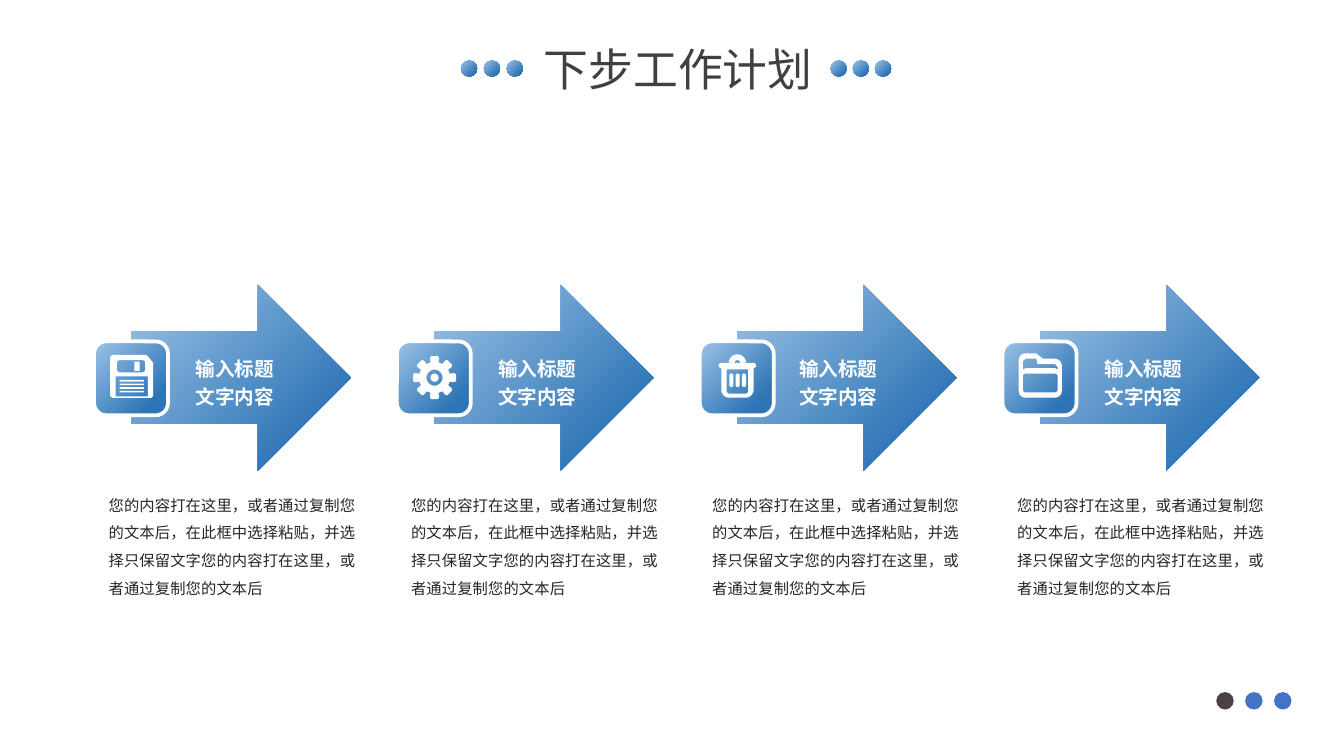
"""Build the next-steps slide: four arrow cards under a dotted title."""
from math import cos, sin, radians
from lxml.etree import SubElement
from pptx import Presentation
from pptx.dml.color import RGBColor
from pptx.enum.shapes import MSO_SHAPE as Kind
from pptx.enum.text import MSO_ANCHOR as Anchor, MSO_AUTO_SIZE as Auto, PP_ALIGN as Align
from pptx.oxml.ns import qn
from pptx.util import Inches, Pt

FONT = "Noto Sans CJK SC"
BLUES = ("9DC3E6", "2E75B6")
BODY = "您的内容打在这里，或者通过复制您的文本后，在此框中选择粘贴，并选择只保留文字您的内容打在这里，或者通过复制您的文本后"
tint = RGBColor.from_string


def arc(x, y, r, start=0, end=360, w=0, h=0):
    """Return points of an arc, pulled apart by w and h into a rounded box."""
    turns = [radians(a) for a in range(start + 5, end, 10)]
    return [(x + r * cos(t) + w * (cos(t) > 0), y + r * sin(t) + h * (sin(t) > 0))
            for t in turns]


def paint(shape, *hues):
    """Fill a shape with one colour or a diagonal blend of two."""
    shape.shadow.inherit = False
    shape.line.fill.background()
    if len(hues) == 1:
        shape.fill.solid()
        shape.fill.fore_color.rgb = tint(hues[0])
        return
    shape.fill.gradient()
    shape.fill.gradient_angle = 315
    for stop, hue, place in zip(shape.fill.gradient_stops, hues, (0, 0.81)):
        stop.color.rgb = tint(hue)
        stop.position = place


disk = [
    [(15, 0), (270, 0), (320, 60), (320, 305), (305, 320), (15, 320), (0, 305), (0, 15)],
    arc(70, 60, 20, w=170, h=50),
    arc(40, 160, 0, w=240, h=150),
    arc(180, 50, 0, w=40, h=70),
] + [arc(70, 187 + 27 * n, 0, w=180, h=12) for n in range(4)]

teeth = [(160 + r * cos(radians(a + d)), 160 + r * sin(radians(a + d)))
         for a in range(0, 360, 45)
         for r, d in ((117, -15), (150, -13), (162, -9), (162, 9), (150, 13), (117, 15))]
gear = [teeth, arc(160, 160, 60), arc(160, 160, 30)]

trash = [
    arc(160, 62, 65, 180, 360) + arc(160, 62, 22, 180, 360)[::-1],
    arc(40, 80, 20, w=240),
    arc(100, 260, 60, 0, 180, w=120) + [(40, 100), (280, 100)],
    arc(100, 270, 20, 0, 180, w=120) + [(80, 110), (240, 110)],
] + [arc(115 + 47 * n, 155, 15, h=70) for n in range(3)]

folder = [
    arc(50, 50, 50, 180, 270) + [(130, 0), (180, 40)]
    + arc(270, 90, 50, 270, 360) + arc(50, 280, 50, 0, 180, w=220),
    arc(50, 170, 20, w=220, h=100),
    [(30, 120), (30, 60), (50, 40), (130, 40), (140, 80),
     (270, 80), (290, 100), (290, 120), (270, 110), (50, 110)],
]

deck = Presentation()
deck.slide_width, deck.slide_height = Inches(10), Inches(10 * 9 / 16)
slide = deck.slides.add_slide(deck.slide_layouts[5])
shapes = slide.shapes

title = shapes.title
title.left, title.top, title.width, title.height = map(Inches, (2, 0.26, 6.09, 0.5))
title.text_frame.text = "下步工作计划"
title.text_frame.margin_top = title.text_frame.margin_bottom = 0
title.text_frame.vertical_anchor = Anchor.MIDDLE
texts = [(title, 24, "404040", False, Align.CENTER, None)]

cards = [(disk, 2.64, 0.71), (gear, 2.65, 2.96), (trash, 2.64, 5.2), (folder, 2.63, 7.47)]
for n, (icon, top, edge) in enumerate(cards):
    left = 0.98 + n * 6.76 / 3
    arrow = shapes.add_shape(Kind.RIGHT_ARROW, Inches(left), Inches(2.12), Inches(1.63), Inches(1.38))
    paint(arrow, *BLUES)
    tile = shapes.add_shape(Kind.ROUNDED_RECTANGLE, Inches(left - 0.28), Inches(2.54), Inches(0.55), Inches(0.55))
    paint(tile, *BLUES)
    tile.line.color.rgb = tint("FFFFFF")
    tile.line.width = Pt(2)

    pen = shapes.build_freeform(*icon[0][0], scale=Inches(1) / 1000)
    pen.add_line_segments(icon[0][1:])
    for ring in icon[1:]:
        pen.move_to(*ring[0])
        pen.add_line_segments(ring[1:])
    paint(pen.convert_to_shape(Inches(left - 0.16), Inches(top)), "FFFFFF")

    head = shapes.add_textbox(Inches(edge + 0.65), Inches(2.57), Inches(0.85), Inches(0.53))
    head.text_frame.text = "输入标题\n文字内容"
    texts.append((head, 10.5, "FFFFFF", True, Align.JUSTIFY, 15.1))
    note = shapes.add_textbox(Inches(edge), Inches(3.57), Inches(2.15), Inches(0.93))
    note.text_frame.text = BODY
    note.text_frame.margin_right = Inches(0.15)
    texts.append((note, 8.25, "262626", False, Align.LEFT, 14.85))

for box, size, hue, bold, align, pitch in texts:
    frame = box.text_frame
    frame.word_wrap = True
    frame.auto_size = Auto.NONE
    for para in frame.paragraphs:
        para.alignment = align
        if pitch:
            para.line_spacing = Pt(pitch)
        for run in para.runs:
            font = run.font
            font.name, font.size, font.bold = FONT, Pt(size), bold
            font.color.rgb = tint(hue)
            SubElement(run._r.get_or_add_rPr(), qn("a:ea")).set("typeface", FONT)

rows = [
    (3.43, 0.17, 0.45, 0.12, [BLUES] * 3),
    (6.18, 0.165, 0.45, 0.12, [BLUES] * 3),
    (9.05, 0.215, 5.15, 0.13, [("4C4042",), ("4472C4",), ("4472C4",)]),
]
for left, step, top, size, fills in rows:
    for n, hues in enumerate(fills):
        dot = shapes.add_shape(Kind.OVAL, Inches(left + n * step), Inches(top), Inches(size), Inches(size))
        paint(dot, *hues)

deck.save("out.pptx")
